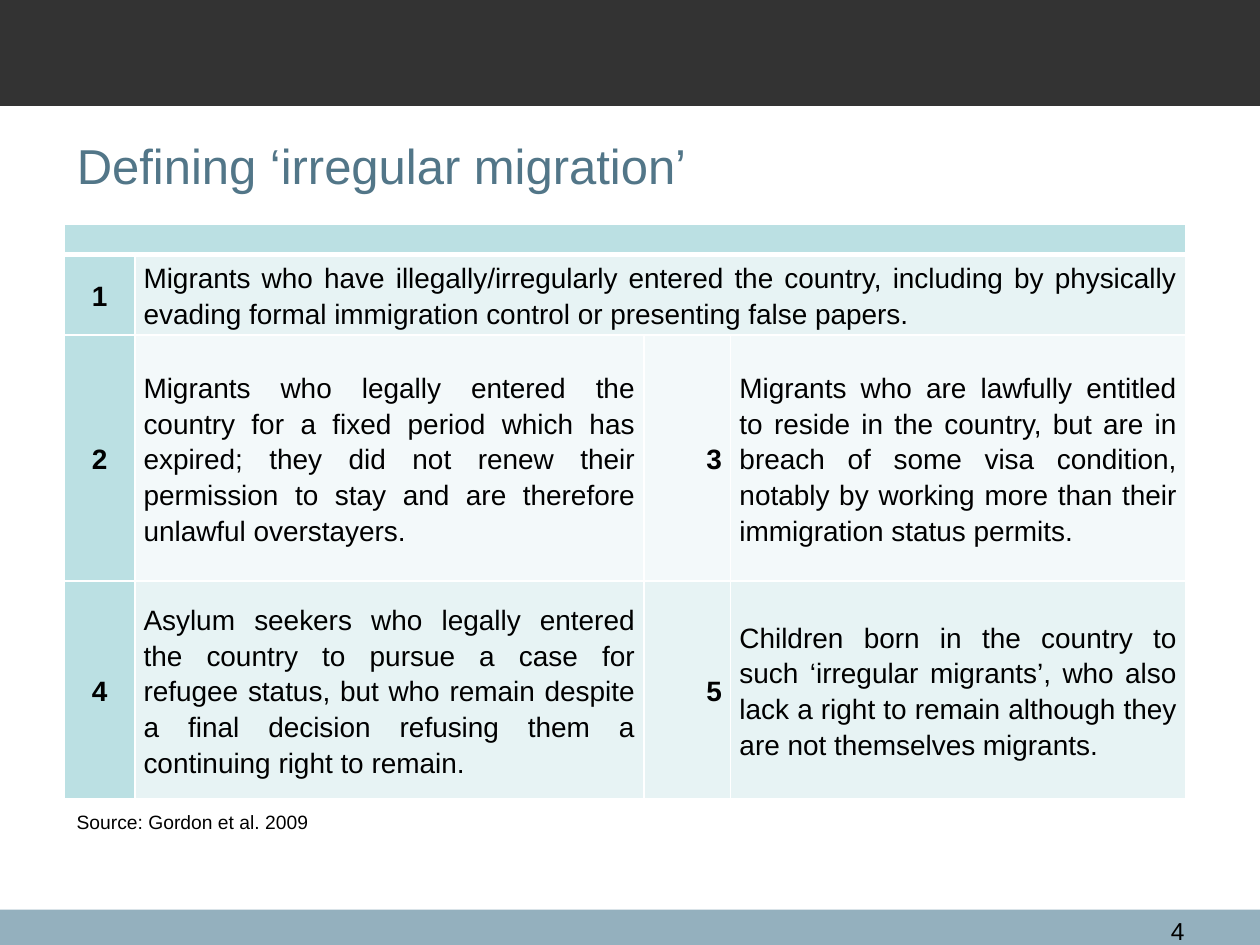
from lxml.etree import SubElement as Sub
from pptx import Presentation
from pptx.dml.color import RGBColor as RGB
from pptx.enum.shapes import MSO_SHAPE as Shape
from pptx.enum.text import MSO_ANCHOR as Anchor, PP_ALIGN as Align
from pptx.oxml.ns import qn
from pptx.util import Inches, Pt

# Content
TITLE = "Defining ‘irregular migration’"
SOURCE = "Source: Gordon et al. 2009"
NUMBER = "4"
ROWS = [
    [""],
    ["1", "Migrants who have illegally/irregularly entered the country, "
          "including by physically evading formal immigration control or "
          "presenting false papers."],
    ["2", "Migrants who legally entered the country for a fixed period which "
          "has expired; they did not renew their permission to stay and are "
          "therefore unlawful overstayers.",
     "3", "Migrants who are lawfully entitled to reside in the country, but "
          "are in breach of some visa condition, notably by working more than "
          "their immigration status permits."],
    ["4", "Asylum seekers who legally entered the country to pursue a case "
          "for refugee status, but who remain despite a final decision "
          "refusing them a continuing right to remain.",
     "5", "Children born in the country to such ‘irregular migrants’, who "
          "also lack a right to remain although they are not themselves "
          "migrants."],
]
WIDTHS = [0.56, 4.04, 0.69, 3.61]
HEIGHTS = [0.24, 0.64, 1.95, 1.73]
ALIGNS = [Align.CENTER, Align.JUSTIFY, Align.RIGHT, Align.JUSTIFY]

# Theme
THEME = {
    "font": "Arial", "ink": "000000", "title": "527688", "line": "FFFFFF",
    "top": "333333", "foot": "94B0BE", "head": "BBE0E3",
    "bands": ["F3F9FA", "E7F3F4"],
    "size": {"title": 28, "cell": 16, "page": 14, "note": 11, "head": 10},
}


def style(para, size, color="ink", bold=False, align=Align.LEFT):
    font = para.font
    font.name, font.size, font.bold = THEME["font"], Pt(THEME["size"][size]), bold
    font.color.rgb = RGB.from_string(THEME[color])
    para.alignment = align


def bar(slide, top, height, color):
    box = slide.shapes.add_shape(Shape.RECTANGLE, 0, Inches(top),
                                 Inches(10), Inches(height))
    box.shadow.inherit = False
    box.fill.solid()
    box.fill.fore_color.rgb = RGB.from_string(THEME[color])
    box.line.fill.background()


def label(slide, text, spot, size, align=Align.LEFT):
    frame = slide.shapes.add_textbox(*map(Inches, spot)).text_frame
    frame.word_wrap = True
    frame.text = text
    style(frame.paragraphs[0], size, align=align)


def border(cell, side, width):
    line = Sub(cell._tc.get_or_add_tcPr(), qn(f"a:ln{side}"), w=str(Pt(width)))
    Sub(Sub(line, qn("a:solidFill")), qn("a:srgbClr"), val=THEME["line"])


def dress(cell, row, col):
    for side in "LRTB":
        thick = (row, side) in [(0, "B"), (1, "T")]
        border(cell, side, 3 if thick else 1)
    cell.fill.solid()
    tint = THEME["head"] if row == 0 or col == 0 else THEME["bands"][row % 2]
    cell.fill.fore_color.rgb = RGB.from_string(tint)
    cell.margin_left = cell.margin_right = Inches(0.07)
    cell.margin_top = cell.margin_bottom = 0
    cell.vertical_anchor = Anchor.MIDDLE


def grid(slide):
    table = slide.shapes.add_table(
        len(ROWS), len(WIDTHS), Inches(0.51), Inches(1.78),
        Inches(sum(WIDTHS)), Inches(sum(HEIGHTS))).table
    for col, width in zip(table.columns, WIDTHS):
        col.width = Inches(width)
    for r, (texts, height) in enumerate(zip(ROWS, HEIGHTS)):
        table.rows[r].height = Inches(height)
        for c in range(len(WIDTHS)):
            cell = table.cell(r, c)
            dress(cell, r, c)
            text = texts[c] if c < len(texts) else ""
            if text:
                cell.text = text
            para = cell.text_frame.paragraphs[0]
            if text:
                style(para, "cell", bold=c % 2 == 0, align=ALIGNS[c])
                para.line_spacing = 1.15
            else:  # small type keeps an empty cell low
                Sub(para._p, qn("a:endParaRPr"),
                    sz=str(THEME["size"]["head"] * 100))
        # The last text of a short row runs to the right edge
        if len(texts) < len(WIDTHS):
            table.cell(r, len(texts) - 1).merge(table.cell(r, len(WIDTHS) - 1))


def main():
    deck = Presentation()
    deck.slide_width, deck.slide_height = Inches(10), Inches(7.5)
    slide = deck.slides.add_slide(deck.slide_layouts[5])

    # Bars and page number
    bar(slide, 7.22, 0.28, "foot")
    bar(slide, 0, 0.84, "top")
    label(slide, NUMBER, (8.86, 7.22, 0.64, 0.24), "page", Align.RIGHT)

    # Title
    title = slide.shapes.title
    title.left, title.top, title.width, title.height = map(
        Inches, (0.51, 0.84, 9, 0.94))
    title.text_frame.text = TITLE
    title.text_frame.vertical_anchor = Anchor.MIDDLE
    style(title.text_frame.paragraphs[0], "title", "title")

    # Table and its source
    label(slide, SOURCE, (0.51, 6.38, 9, 0.28), "note")
    grid(slide)
    deck.save("out.pptx")


if __name__ == "__main__":
    main()
